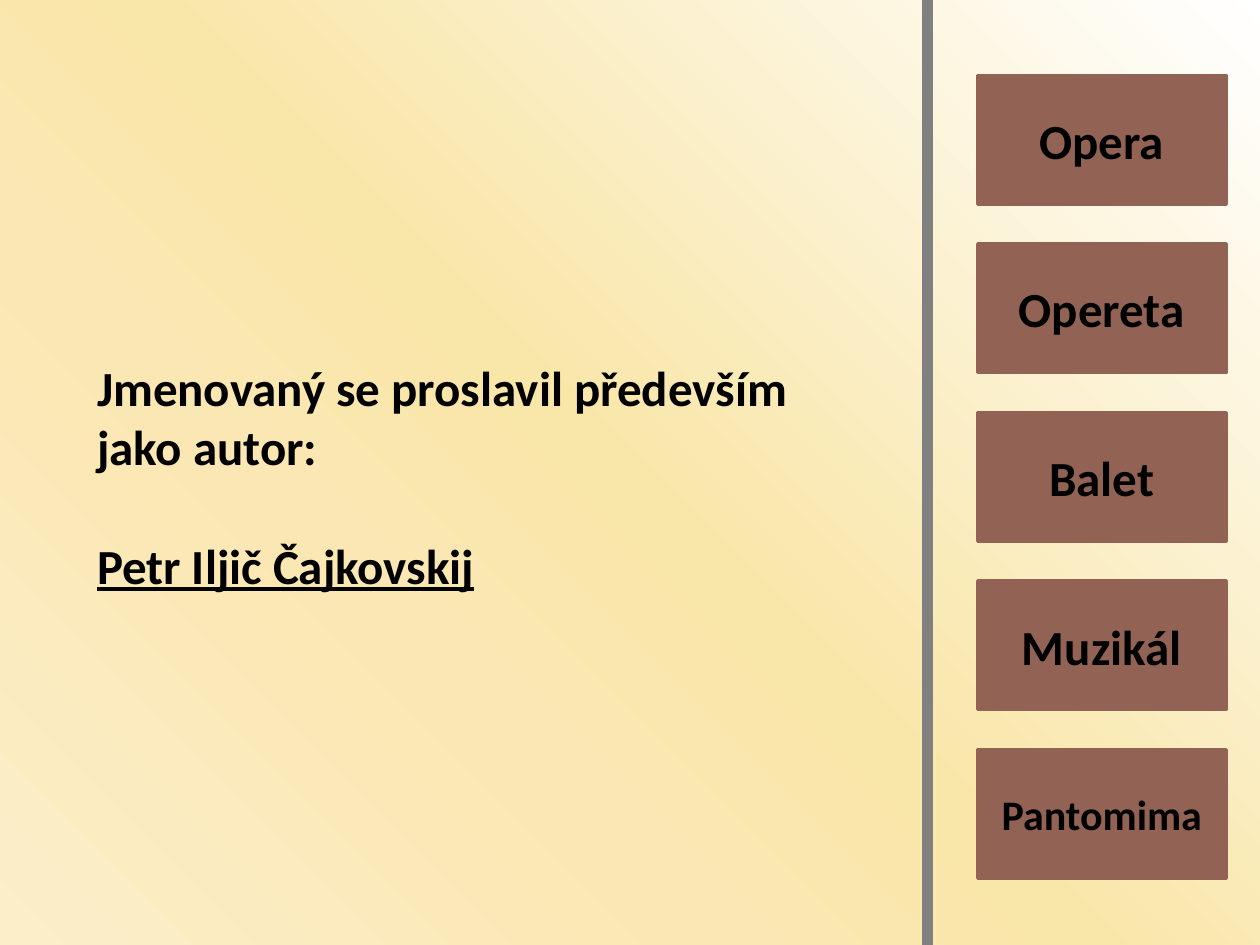
from lxml import etree
from pptx import Presentation
from pptx.dml.color import RGBColor
from pptx.enum.shapes import MSO_CONNECTOR, MSO_SHAPE
from pptx.enum.text import MSO_ANCHOR, MSO_AUTO_SIZE, PP_ALIGN
from pptx.oxml.ns import qn
from pptx.util import Pt

BUTTON = MSO_SHAPE.ACTION_BUTTON_CUSTOM
STRAIGHT = MSO_CONNECTOR.STRAIGHT
TOP, MIDDLE = MSO_ANCHOR.TOP, MSO_ANCHOR.MIDDLE
LEFT, CENTER = PP_ALIGN.LEFT, PP_ALIGN.CENTER

QUESTION = "Jmenovaný se proslavil především jako autor:"
COMPOSER = "Petr Iljič Čajkovskij"
ANSWERS = [("Opera", 28), ("Opereta", 28), ("Balet", 28), ("Muzikál", 28), ("Pantomima", 24)]
GRADIENT = [(0, "FBEEC9"), (32, "FBE7B3"), (50, "F9E6A9"), (100, "FFFFFF")]
BROWN, GRAY, BLACK = "926255", "808080", "000000"

WIDTH, HEIGHT = 720, 540
DIVIDER_X = 530
QUESTION_BOX = {"left": 48.24, "top": 200.88, "width": 414, "height": 143.28}
BUTTON_X, BUTTON_Y, BUTTON_W, BUTTON_H, PITCH = 558.7, 43.2, 141.8, 73.4, 96.3


def rgb(value):
    return RGBColor.from_string(value)


def set_attrs(obj, values):
    for name, value in values.items():
        setattr(obj, name, value)


def write(p, text, size, align, **extra):
    p.alignment = align
    r = p.add_run()
    r.text = text
    set_attrs(r.font, {"name": "Calibri", "size": Pt(size), "bold": True, **extra})
    r.font.color.rgb = rgb(BLACK)


def add_background(s):
    fill = s.background.fill
    fill.gradient()
    fill.gradient_angle = 45
    stops = next(s.background._cSld.iter(qn("a:gsLst")))
    for stop in list(stops):
        stops.remove(stop)
    for position, color in GRADIENT:
        stop = etree.SubElement(stops, qn("a:gs"), pos=str(position * 1000))
        etree.SubElement(stop, qn("a:srgbClr"), val=color)


def add_question(s):
    sp = s.shapes.title
    set_attrs(sp, {name: Pt(value) for name, value in QUESTION_BOX.items()})
    tf = sp.text_frame
    set_attrs(tf, {"word_wrap": True, "vertical_anchor": TOP,
                   "auto_size": MSO_AUTO_SIZE.SHAPE_TO_FIT_TEXT})
    write(tf.paragraphs[0], QUESTION, 28, LEFT)
    p = tf.add_paragraph()
    p.space_before = Pt(34)
    write(p, COMPOSER, 28, LEFT, underline=True)


def add_divider(s):
    line = s.shapes.add_connector(STRAIGHT, Pt(DIVIDER_X), 0, Pt(DIVIDER_X), Pt(HEIGHT))
    line.line.color.rgb = rgb(GRAY)
    line.line.width = Pt(6)
    etree.SubElement(line._element.spPr, qn("a:effectLst"))


def add_answer(s, row, text, size):
    sp = s.shapes.add_shape(BUTTON, Pt(BUTTON_X), Pt(BUTTON_Y + row * PITCH),
                            Pt(BUTTON_W), Pt(BUTTON_H))
    sp.shadow.inherit = False
    sp.fill.solid()
    sp.fill.fore_color.rgb = rgb(BROWN)
    sp.line.color.rgb = rgb(BROWN)
    sp.line.width = Pt(2)
    tf = sp.text_frame
    set_attrs(tf, {"word_wrap": True, "vertical_anchor": MIDDLE})
    write(tf.paragraphs[0], text, size, CENTER)


def main():
    prs = Presentation()
    set_attrs(prs, {"slide_width": Pt(WIDTH), "slide_height": Pt(HEIGHT)})
    s = prs.slides.add_slide(prs.slide_layouts.get_by_name("Title Only"))
    add_background(s)
    add_question(s)
    add_divider(s)
    for row, (text, size) in enumerate(ANSWERS):
        add_answer(s, row, text, size)
    prs.save("out.pptx")


if __name__ == "__main__":
    main()
